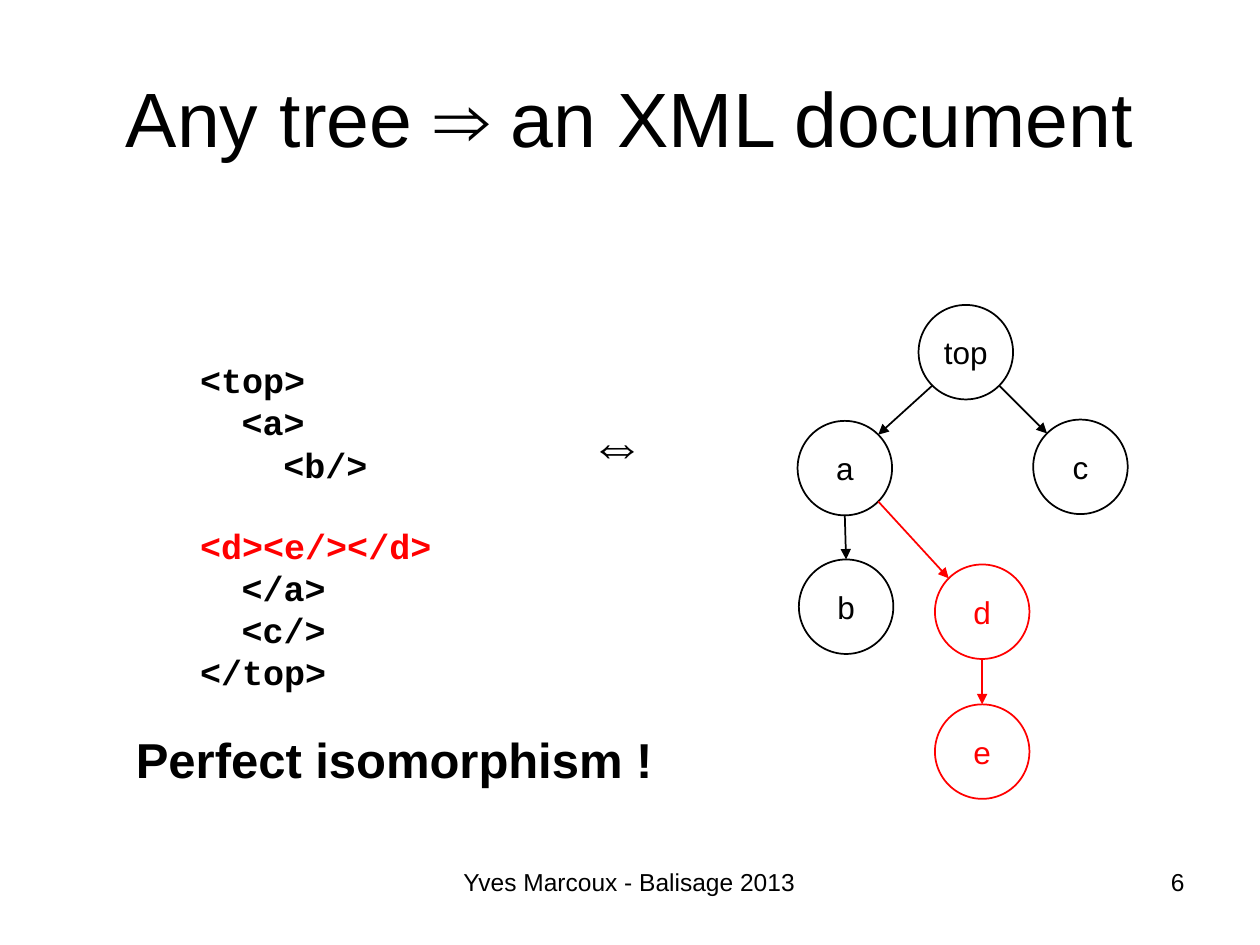
"""Build a slide showing that a tree corresponds to an XML document."""
from dataclasses import dataclass
from math import sqrt

from lxml import etree
from pptx import Presentation
from pptx import util as u
from pptx.dml.color import RGBColor
from pptx.enum import shapes, text
from pptx.oxml.ns import qn

BLACK = RGBColor(0, 0, 0)
RED = RGBColor(255, 0, 0)
DIAMETER = 0.75
DIAGONAL = DIAMETER / 2 / sqrt(2)
CODE_STEP = 0.33
CODE_LINE = 22.65


@dataclass(frozen=True)
class Node:
    label: str
    left: float
    top: float
    color: RGBColor = BLACK

    def point(self, across: float, down: float) -> tuple[float, float]:
        return self.left + DIAMETER / 2 + across, self.top + DIAMETER / 2 + down


@dataclass(frozen=True)
class CodeLine:
    content: str
    level: int = 0
    color: RGBColor = BLACK
    space_before: float = 0


NODES = {
    node.label: node
    for node in (
        Node("top", 7.29, 2.42),
        Node("a", 6.33, 3.34),
        Node("b", 6.34, 4.44),
        Node("c", 8.2, 3.33),
        Node("d", 7.42, 4.48, RED),
        Node("e", 7.42, 5.59, RED),
    )
}
EDGES = [("top", "a", -1), ("top", "c", 1), ("a", "b", 0), ("a", "d", 1), ("d", "e", 0)]
CODE = [
    CodeLine("<top>"),
    CodeLine("<a>", 1),
    CodeLine("<b/>", 2),
    CodeLine("<d><e/></d>", color=RED, space_before=CODE_LINE),
    CodeLine("</a>", 1),
    CodeLine("<c/>", 1),
    CodeLine("</top>"),
]


def write(paragraph, content: str, *, size: float, color: RGBColor = BLACK,
          font: str = "Arial", bold: bool = False, align=text.PP_ALIGN.LEFT) -> None:
    paragraph.alignment = align
    run = paragraph.add_run()
    run.text = content
    run.font.name = font
    run.font.size = u.Pt(size)
    run.font.bold = bold
    run.font.color.rgb = color


def add_box(slide, box: tuple[float, float, float, float], *, wrap: bool = True,
            anchor=text.MSO_ANCHOR.TOP):
    shape = slide.shapes.add_textbox(*map(u.Inches, box))
    shape.text_frame.word_wrap = wrap
    shape.text_frame.vertical_anchor = anchor
    return shape.text_frame


def add_code(slide, lines: list[CodeLine]) -> None:
    frame = add_box(slide, (1.49, 2.8, 2.7, 2.77))
    for index, line in enumerate(lines):
        paragraph = frame.add_paragraph() if index else frame.paragraphs[0]
        paragraph.space_before = u.Pt(line.space_before)
        write(paragraph, line.content, size=20, color=line.color, font="Courier New", bold=True)
        margin = u.Inches(CODE_STEP * line.level)
        paragraph._p.get_or_add_pPr().set("marL", str(int(margin)))


def add_node(slide, node: Node) -> None:
    shape = slide.shapes.add_shape(
        shapes.MSO_SHAPE.OVAL, *map(u.Inches, (node.left, node.top, DIAMETER, DIAMETER)))
    shape.shadow.inherit = False
    shape.fill.background()
    shape.line.color.rgb = node.color
    shape.line.width = u.Pt(1)
    frame = shape.text_frame
    frame.word_wrap = False
    frame.vertical_anchor = text.MSO_ANCHOR.MIDDLE
    write(frame.paragraphs[0], node.label, size=18, color=node.color, align=text.PP_ALIGN.CENTER)


def add_edge(slide, parent: Node, child: Node, side: int) -> None:
    across = side * DIAGONAL
    down = DIAGONAL if side else DIAMETER / 2
    ends = parent.point(across, down) + child.point(-across, -down)
    connector = slide.shapes.add_connector(
        shapes.MSO_CONNECTOR.STRAIGHT, *map(u.Inches, ends))
    connector.line.color.rgb = child.color
    connector.line.width = u.Pt(1)
    etree.SubElement(connector.line._get_or_add_ln(), qn("a:tailEnd"), type="triangle")
    etree.SubElement(connector._element.spPr, qn("a:effectLst"))


def main() -> None:
    presentation = Presentation()
    presentation.slide_width = u.Inches(10)
    presentation.slide_height = u.Inches(7.5)
    slide = presentation.slides.add_slide(presentation.slide_layouts[6])

    title = add_box(slide, (0.5, 0.3, 9, 1.25), anchor=text.MSO_ANCHOR.MIDDLE)
    write(title.paragraphs[0], "Any tree ⇒ an XML document", size=44, align=text.PP_ALIGN.CENTER)
    add_code(slide, CODE)
    equivalence = add_box(slide, (4.58, 3.2, 0.66, 0.63), wrap=False)
    write(equivalence.paragraphs[0], "⇔", size=32)
    conclusion = add_box(slide, (0.98, 5.74, 4.31, 0.57), wrap=False)
    write(conclusion.paragraphs[0], "Perfect isomorphism !", size=28, bold=True)

    for node in NODES.values():
        add_node(slide, node)
    for parent, child, side in EDGES:
        add_edge(slide, NODES[parent], NODES[child], side)

    footer = add_box(slide, (2.33, 6.83, 5.33, 0.52))
    write(footer.paragraphs[0], "Yves Marcoux - Balisage 2013", size=14, align=text.PP_ALIGN.CENTER)
    number = add_box(slide, (7.17, 6.83, 2.33, 0.52))
    write(number.paragraphs[0], "6", size=14, align=text.PP_ALIGN.RIGHT)
    presentation.save("out.pptx")


if __name__ == "__main__":
    main()
